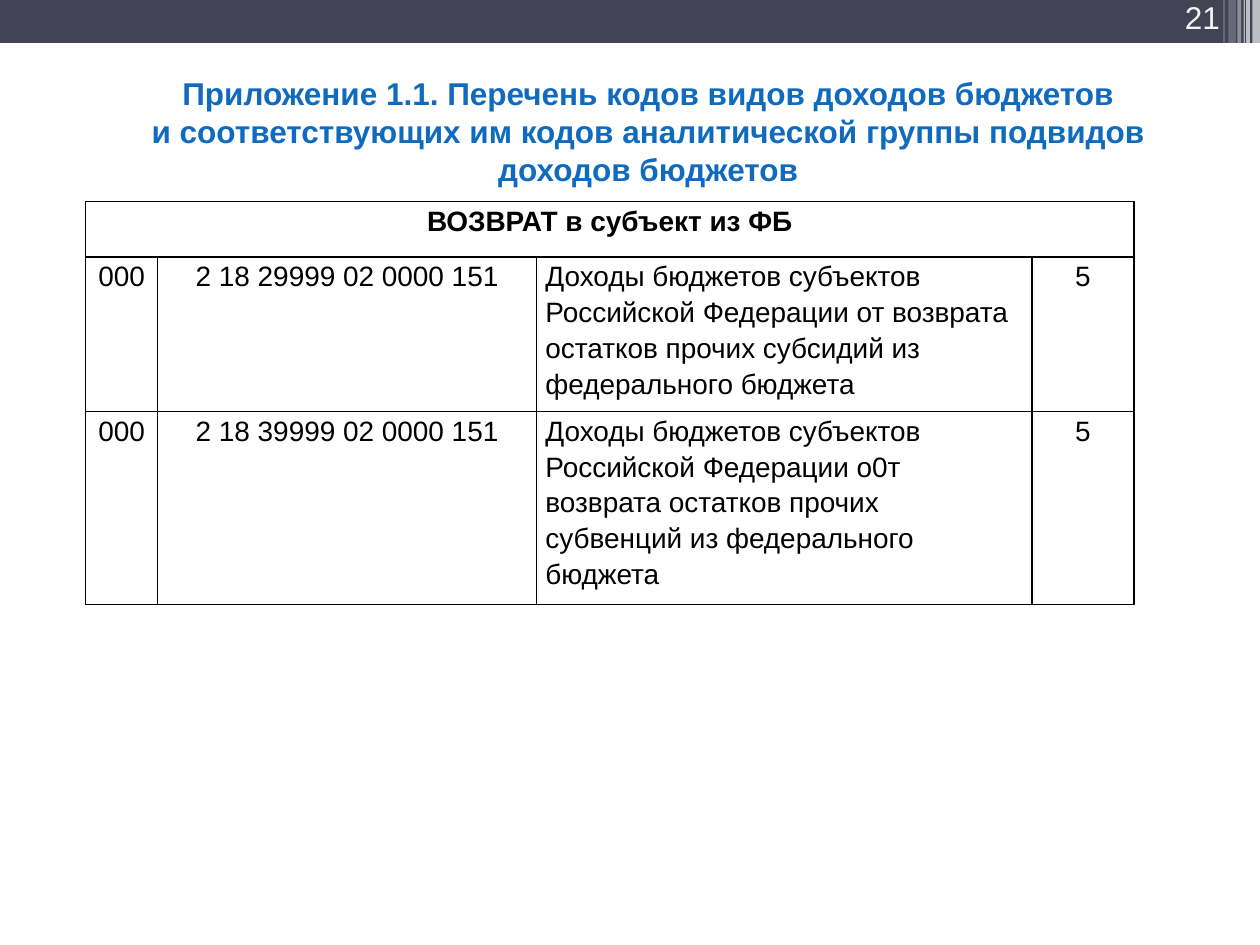
from lxml import etree
from pptx import Presentation
from pptx.dml.color import RGBColor
from pptx.enum.shapes import MSO_SHAPE
from pptx.enum.text import MSO_ANCHOR, PP_ALIGN
from pptx.oxml import parse_xml
from pptx.oxml.ns import nsdecls, qn
from pptx.util import Inches, Pt

RECT = MSO_SHAPE.RECTANGLE
TOP, BOTTOM = MSO_ANCHOR.TOP, MSO_ANCHOR.BOTTOM
LEFT, CENTER, RIGHT = PP_ALIGN.LEFT, PP_ALIGN.CENTER, PP_ALIGN.RIGHT

BLACK = RGBColor(0x00, 0x00, 0x00)
WHITE = RGBColor(0xFF, 0xFF, 0xFF)
SLATE = RGBColor(0x42, 0x44, 0x56)
PALE = RGBColor(0xF2, 0xF2, 0xF2)
BLUE = RGBColor(0x10, 0x6B, 0xBE)

STRIPES = [
    (9.94, 0.06, 0.68, 65),
    (9.89, 0.03, 0.68, 65),
    (9.87, 0.01, 0.68, 60),
    (9.82, 0.03, 0.68, 40),
    (9.75, 0.06, 0.64, 20),
    (9.71, 0.01, 0.64, 30),
]
TITLE = [
    "Приложение 1.1. Перечень кодов видов доходов бюджетов",
    "и соответствующих им кодов аналитической группы подвидов доходов бюджетов",
]
HEADING = "ВОЗВРАТ в субъект из ФБ"
ROWS = [
    ("000", "2 18 29999 02 0000 151",
     "Доходы бюджетов субъектов Российской Федерации от возврата остатков "
     "прочих субсидий из федерального бюджета", "5"),
    ("000", "2 18 39999 02 0000 151",
     "Доходы бюджетов субъектов Российской Федерации о0т возврата остатков "
     "прочих субвенций из федерального бюджета", "5"),
]
COL_WIDTHS = [0.57, 3.01, 3.93, 0.81]
ROW_HEIGHTS = [0.44, 1.22, 1.53]
ALIGNMENTS = [CENTER, CENTER, LEFT, CENTER]


def set_attrs(obj, values):
    """Set each attribute of an object from a dict."""
    for name, value in values.items():
        setattr(obj, name, value)


def write(p, text, color, **font):
    """Add a formatted Arial run to a paragraph."""
    r = p.add_run()
    r.text = text
    set_attrs(r.font, dict(name="Arial", **font))
    r.font.color.rgb = color


def add_text(s, box, lines, fmt, frame, align):
    """Add a wrapping text box with one paragraph per line."""
    tf = s.shapes.add_textbox(*map(Inches, box)).text_frame
    set_attrs(tf, dict(word_wrap=True, **frame))
    for i, line in enumerate(lines):
        p = tf.add_paragraph() if i else tf.paragraphs[0]
        p.alignment = align
        write(p, line, **fmt)


def add_bar(s, box, color, opacity=100):
    """Add a borderless rectangle with the given opacity in percent."""
    sp = s.shapes.add_shape(RECT, *map(Inches, box))
    sp.shadow.inherit = False
    sp.fill.solid()
    sp.fill.fore_color.rgb = color
    sp.line.fill.background()
    if opacity < 100:
        clr = sp.fill._xPr.find(".//" + qn("a:srgbClr"))
        etree.SubElement(clr, qn("a:alpha"), val=str(opacity * 1000))


def add_header(s, left, top, width, height):
    """Draw the top band with its stripes and page number."""
    add_bar(s, (left, top, width, height), SLATE)
    for x, w, h, opacity in STRIPES:
        add_bar(s, (left + x, top, w, h), WHITE, opacity)
    add_text(s, (left + 8.99, top, 0.79, 0.33), ["21"],
             dict(size=Pt(18), color=PALE),
             dict(vertical_anchor=BOTTOM), RIGHT)


def add_title(s, *box):
    """Write the centred title."""
    add_text(s, box, TITLE, dict(size=Pt(18), bold=True, color=BLUE),
             dict(vertical_anchor=TOP, margin_top=Inches(0.08)), CENTER)


def format_cell(cell, text, align, bold):
    """Fill a table cell and give it thin black borders."""
    set_attrs(cell, dict(margin_left=Inches(0.07), margin_right=Inches(0.07),
                         margin_top=0, margin_bottom=0))
    cell.fill.background()
    tcPr = cell._tc.get_or_add_tcPr()
    for i, side in enumerate("LRTB"):
        tcPr.insert(i, parse_xml(
            f'<a:ln{side} {nsdecls("a")} w="12700"><a:solidFill>'
            f'<a:srgbClr val="{BLACK}"/></a:solidFill></a:ln{side}>'))
    p = cell.text_frame.paragraphs[0]
    set_attrs(p, dict(alignment=align, line_spacing=1.15))
    if text:
        write(p, text, BLACK, size=Pt(16), bold=bold)


def add_codes_table(s, left, top):
    """Build the table of income codes under a merged heading row."""
    rows = [(HEADING, "", "", "")] + ROWS
    box = (left, top, sum(COL_WIDTHS), sum(ROW_HEIGHTS))
    table = s.shapes.add_table(len(rows), len(COL_WIDTHS),
                               *map(Inches, box)).table
    set_attrs(table, dict(first_row=False, horz_banding=False))
    for col, width in zip(table.columns, COL_WIDTHS):
        col.width = Inches(width)
    for row, height in zip(table.rows, ROW_HEIGHTS):
        row.height = Inches(height)
    for i, values in enumerate(rows):
        for j, text in enumerate(values):
            align = ALIGNMENTS[j] if i else CENTER
            format_cell(table.cell(i, j), text, align, i == 0)
    table.cell(0, 0).merge(table.cell(0, len(COL_WIDTHS) - 1))


def main():
    """Build and save the slide."""
    prs = Presentation()
    set_attrs(prs, dict(slide_width=Inches(10), slide_height=Inches(7.5)))
    s = prs.slides.add_slide(prs.slide_layouts[6])
    add_header(s, 0, 0, 10, 0.34)
    add_codes_table(s, 0.68, 1.6)
    add_title(s, 0.78, 0.51, 8.73, 1.36)
    prs.save("out.pptx")


if __name__ == "__main__":
    main()
